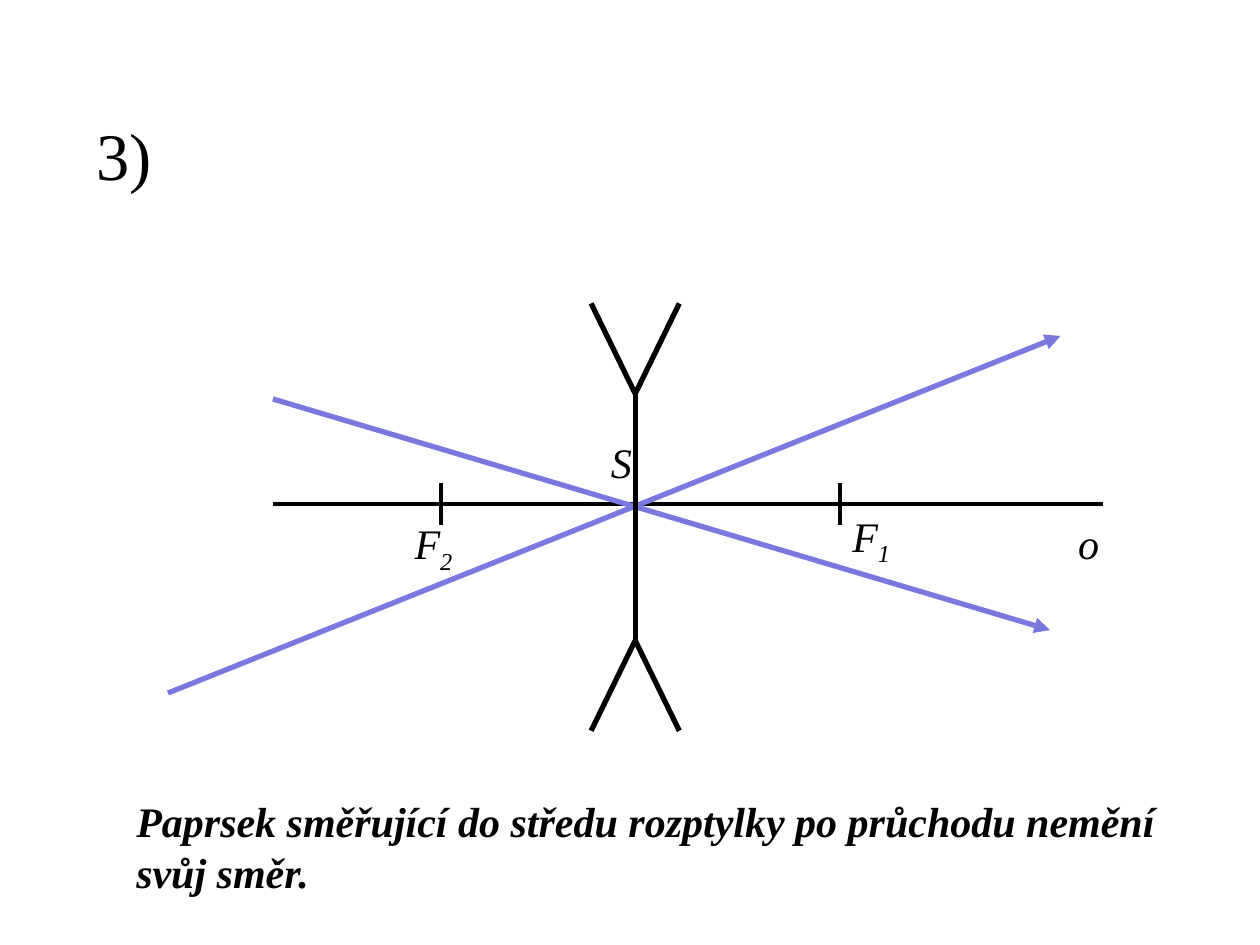
from lxml.etree import SubElement
from pptx import Presentation
from pptx.dml.color import RGBColor as RGB
from pptx.enum.shapes import MSO_CONNECTOR as CONN
from pptx.enum.text import MSO_ANCHOR as ANCHOR, PP_ALIGN as ALIGN
from pptx.oxml.ns import qn
from pptx.util import Inches, Pt

COLS, ROWS = 60, 45
COLORS = {"ink": "000000", "ray": "7878DE"}
FONT = "Times New Roman"


def add_run(p, text, size=24, bold=False, italic=True, sub=False):
    r = p.add_run()
    r.text = text
    f = r.font
    f.name, f.size, f.bold, f.italic = FONT, Pt(size), bold, italic
    f.color.rgb = RGB.from_string(COLORS["ink"])
    if sub:
        r._r.get_or_add_rPr().set("baseline", "-25000")


class Diagram:
    """Current slide on a grid of COLS by ROWS square cells."""

    def __init__(self, prs):
        self.s = prs.slides.add_slide(prs.slide_layouts[5])
        self.dx, self.dy = prs.slide_width / COLS, prs.slide_height / ROWS

    def xy(self, col, row):
        return round(col * self.dx), round(row * self.dy)

    def title(self, text, col, row, w, h):
        sp = self.s.shapes.title
        sp.left, sp.top = self.xy(col, row)
        sp.width, sp.height = self.xy(w, h)
        tf = sp.text_frame
        tf.vertical_anchor = ANCHOR.MIDDLE
        p = tf.paragraphs[0]
        p.alignment = ALIGN.LEFT
        add_run(p, text, size=38, italic=False)

    def text(self, lines, col, row, w, h, sub="", wrap=True, bold=False):
        sp = self.s.shapes.add_textbox(*self.xy(col, row), *self.xy(w, h))
        tf = sp.text_frame
        tf.word_wrap = wrap
        for i, line in enumerate(lines):
            p = tf.add_paragraph() if i else tf.paragraphs[0]
            p.alignment = ALIGN.LEFT
            add_run(p, line, bold=bold)
        if sub:
            add_run(p, sub, sub=True)

    def line(self, start, end, width=3, color="ink", arrow=False, group=None):
        shapes = (group or self.s).shapes
        c = shapes.add_connector(CONN.STRAIGHT, *self.xy(*start), *self.xy(*end))
        c.line.width = Pt(width)
        c.line.color.rgb = RGB.from_string(COLORS[color])
        if arrow:
            SubElement(c.line._get_or_add_ln(), qn("a:tailEnd"), type="triangle")
        SubElement(c._element.spPr, qn("a:effectLst"))

    def ray(self, start, end):
        self.line(start, end, color="ray", arrow=True)

    def diverging_lens(self, x, top, bottom, spread, flare):
        group = self.s.shapes.add_group_shape()
        self.line((x, top), (x, bottom), group=group)
        for y, tip in ((top, top - flare), (bottom, bottom + flare)):
            for side in (-spread, spread):
                self.line((x, y), (x + side, tip), group=group)


def main():
    prs = Presentation()
    prs.slide_width, prs.slide_height = Inches(10), Inches(7.5)
    d = Diagram(prs)
    axis = 24

    d.title("3)", 4, 3.6, 14.65, 7.5)
    d.line((13, axis), (52.5, axis), width=2.25)
    d.text(["Paprsek směřující do středu rozptylky po průchodu nemění",
            "svůj směr."], 5.9, 37.6, 50.15, 5.45, wrap=False, bold=True)
    d.ray((8, 33), (50.5, 16))
    for focus in (40, 21):
        d.line((focus, axis - 1), (focus, axis + 1), width=2.25)
    d.text(["F"], 19.15, 24.35, 5.3, 3, sub="2")
    d.text(["F"], 40, 24, 4.2, 3, sub="1")
    d.text(["S"], 28.5, 20.5, 2, 3)
    d.ray((13, 19), (50, 30))
    d.text(["o"], 50.75, 24.35, 4.2, 3)
    d.diverging_lens(30.25, 18.75, 30.5, spread=2.1, flare=4.3)

    prs.save("out.pptx")


if __name__ == "__main__":
    main()
